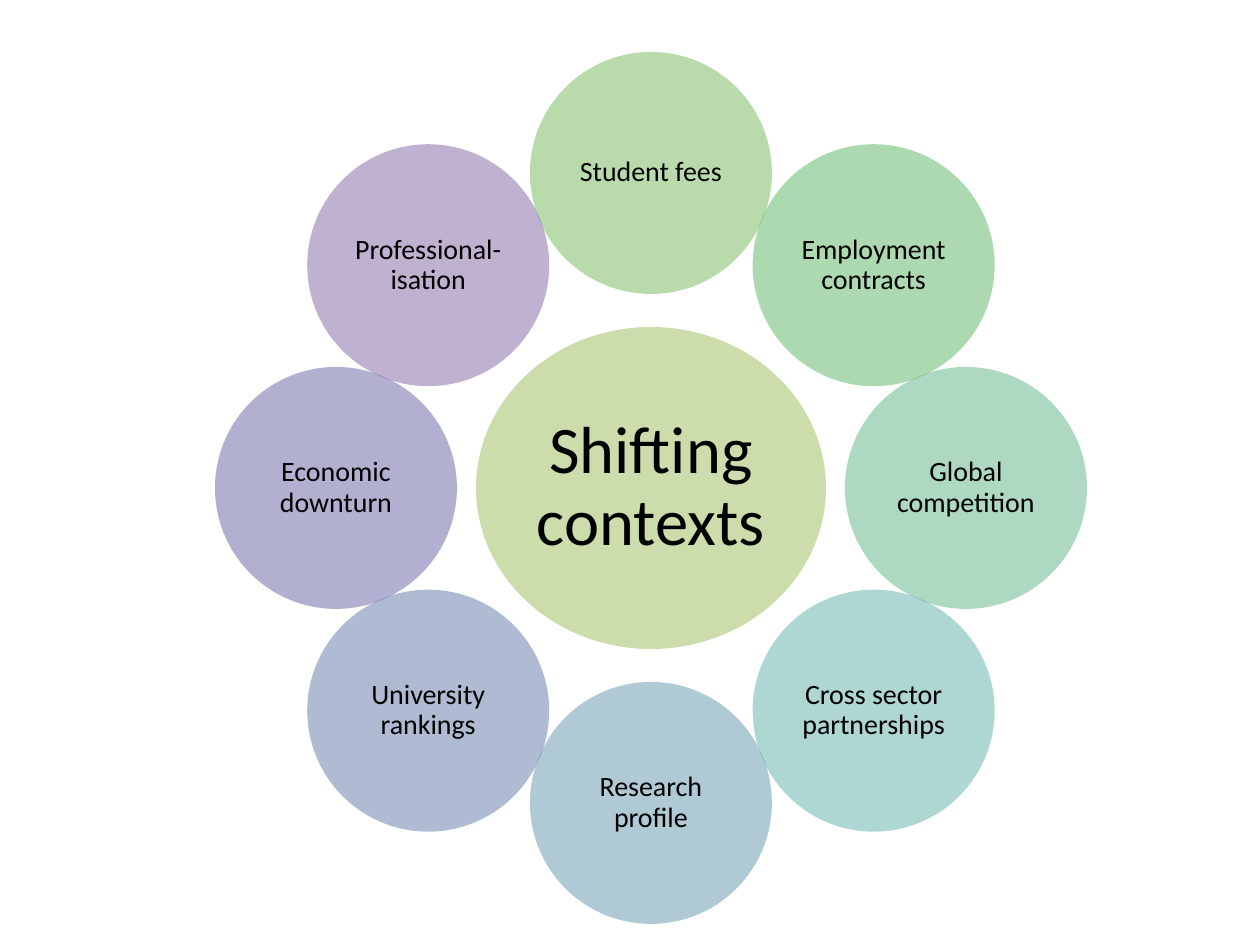
import math

import lxml.etree
import pptx
import pptx.dml.color
import pptx.enum.shapes
import pptx.enum.text
import pptx.oxml.ns
import pptx.util

# Content: the hub, then the outer circles clockwise from the top
HUB = ("Shifting contexts", "olive")
CONTEXTS = [
    ("Student fees", "leaf"),
    ("Employment contracts", "green"),
    ("Global competition", "jade"),
    ("Cross sector partnerships", "teal"),
    ("Research profile", "steel"),
    ("University rankings", "blue"),
    ("Economic downturn", "indigo"),
    ("Professional-isation", "purple"),
]
COLOURS = {
    "olive": "9BBB59", "leaf": "75B85A", "green": "5CB565",
    "jade": "5DB287", "teal": "5EAFA6", "steel": "6096AC",
    "blue": "6179A8", "indigo": "6762A5", "purple": "8064A2",
    "text": "000000",
}

# Layout in px
PX = pptx.util.Inches(1) / 126
SLIDE_W, SLIDE_H = 1260, 945
CENTRE_X, CENTRE_Y = 651, 488
HUB_W, HUB_H = 350, 322
CIRCLE = 242
RING_RADIUS = 315


def emu(px):
    return pptx.util.Emu(round(px * PX))


def rgb(name):
    return pptx.dml.color.RGBColor.from_string(COLOURS[name])


def add_bubble(slide, label, colour, x, y, width, height, size, inset):
    """Add a half-transparent labelled ellipse centred on (x, y)."""
    bubble = slide.shapes.add_shape(
        pptx.enum.shapes.MSO_SHAPE.OVAL,
        emu(x - width / 2), emu(y - height / 2), emu(width), emu(height))
    bubble.shadow.inherit = False
    bubble.line.fill.background()
    bubble.fill.solid()
    bubble.fill.fore_color.rgb = rgb(colour)
    tint = bubble.fill._xPr.find(".//" + pptx.oxml.ns.qn("a:srgbClr"))
    lxml.etree.SubElement(tint, pptx.oxml.ns.qn("a:alpha"), val="50000")

    frame = bubble.text_frame
    frame.word_wrap = True
    frame.vertical_anchor = pptx.enum.text.MSO_ANCHOR.MIDDLE
    frame.margin_left = frame.margin_right = emu(inset)
    frame.margin_top = frame.margin_bottom = emu(inset)
    caption = frame.paragraphs[0]
    caption.text = label
    caption.alignment = pptx.enum.text.PP_ALIGN.CENTER
    caption.line_spacing = 0.9
    caption.font.name = "Calibri"
    caption.font.size = pptx.util.Pt(size)
    caption.font.color.rgb = rgb("text")


def main():
    deck = pptx.Presentation()
    deck.slide_width, deck.slide_height = emu(SLIDE_W), emu(SLIDE_H)
    slide = deck.slides.add_slide(deck.slide_layouts[6])

    # Hub
    add_bubble(slide, *HUB, CENTRE_X, CENTRE_Y, HUB_W, HUB_H, 38, 6)

    # Ring of equal circles
    for i, (label, colour) in enumerate(CONTEXTS):
        angle = 2 * math.pi * i / len(CONTEXTS)
        x = CENTRE_X + RING_RADIUS * math.sin(angle)
        y = CENTRE_Y - RING_RADIUS * math.cos(angle)
        add_bubble(slide, label, colour, x, y, CIRCLE, CIRCLE, 16, 3)

    deck.save("out.pptx")


if __name__ == "__main__":
    main()
